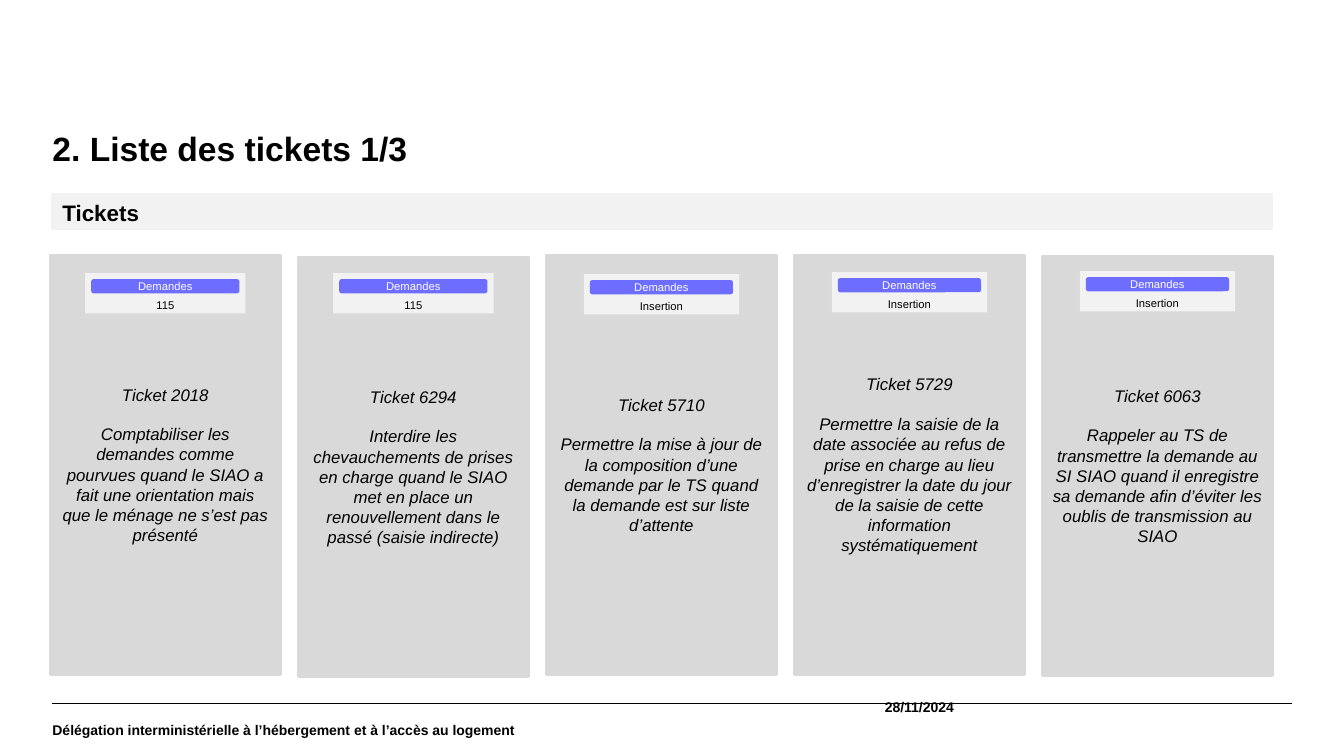
import pptx
import pptx.dml.color
import pptx.enum.shapes
import pptx.enum.text
import pptx.oxml.ns
import pptx.util
from lxml import etree

Inches = pptx.util.Inches
Pt = pptx.util.Pt
RGBColor = pptx.dml.color.RGBColor
SHAPE = pptx.enum.shapes.MSO_SHAPE
ALIGN = pptx.enum.text.PP_ALIGN
ANCHOR = pptx.enum.text.MSO_ANCHOR

BLACK = RGBColor(0x00, 0x00, 0x00)
WHITE = RGBColor(0xFF, 0xFF, 0xFF)
PALE_GREY = RGBColor(0xF2, 0xF2, 0xF2)
CARD_GREY = RGBColor(0xD9, 0xD9, 0xD9)
VIOLET = RGBColor(0x6D, 0x6D, 0xFF)

CARD_WIDTH, CARD_HEIGHT, CARD_STEP = 2.28, 4.16, 2.46
PILL_INSET = 0.06

# Card top, tag top, tag width, tag label, ticket, description
TICKETS = [
    (2.53, 2.71, 1.59, "115", "Ticket 2018",
     "Comptabiliser les demandes comme pourvues quand le SIAO a fait une "
     "orientation mais que le ménage ne s’est pas présenté"),
    (2.55, 2.71, 1.59, "115", "Ticket 6294",
     "Interdire les chevauchements de prises en charge quand le SIAO met en "
     "place un renouvellement dans le passé (saisie indirecte)"),
    (2.53, 2.72, 1.54, "Insertion", "Ticket 5710",
     "Permettre la mise à jour de la composition d’une demande par le TS "
     "quand la demande est sur liste d’attente"),
    (2.53, 2.70, 1.54, "Insertion", "Ticket 5729",
     "Permettre la saisie de la date associée au refus de prise en charge au "
     "lieu d’enregistrer la date du jour de la saisie de cette information "
     "systématiquement"),
    (2.54, 2.69, 1.54, "Insertion", "Ticket 6063",
     "Rappeler au TS de transmettre la demande au SI SIAO quand il enregistre "
     "sa demande afin d’éviter les oublis de transmission au SIAO"),
]


def add_box(shapes, kind, left, top, width, height, fill, outlined=False):
    sp = shapes.add_shape(kind, Inches(left), Inches(top), Inches(width), Inches(height))
    sp.shadow.inherit = False
    sp.fill.solid()
    sp.fill.fore_color.rgb = fill
    if outlined:
        sp.line.color.rgb = fill
        sp.line.width = Pt(2)
    else:
        sp.line.fill.background()
    return sp


def add_text_box(shapes, left, top, width, height, inset=True):
    sp = shapes.add_textbox(Inches(left), Inches(top), Inches(width), Inches(height))
    if not inset:
        tf = sp.text_frame
        tf.margin_left = tf.margin_right = tf.margin_top = tf.margin_bottom = 0
    return sp


def write(sp, lines, size, color=BLACK, bold=False, italic=False,
          align=ALIGN.LEFT, anchor=ANCHOR.TOP, gap=0):
    """Fill a shape with one paragraph per line, gap points apart."""
    tf = sp.text_frame
    tf.word_wrap = True
    tf.vertical_anchor = anchor
    for i, line in enumerate(lines):
        p = tf.add_paragraph() if i else tf.paragraphs[0]
        p.alignment = align
        if i:
            p.space_before = Pt(gap)
        r = p.add_run()
        r.text = line
        r.font.name = "Arial"
        r.font.size = Pt(size)
        r.font.bold = bold
        r.font.italic = italic
        r.font.color.rgb = color


def add_header(s, left, top, width):
    title = add_text_box(s.shapes, left, top, width, 0.5, inset=False)
    write(title, ["2. Liste des tickets 1/3"], 24, bold=True)
    title.text_frame.paragraphs[0].line_spacing = 0.9
    bar = add_box(s.shapes, SHAPE.RECTANGLE, left, top + 0.62, width, 0.34,
                  PALE_GREY, outlined=True)
    write(bar, ["Tickets"], 16, bold=True)


def add_tag(s, left, top, width, label):
    shapes = s.shapes.add_group_shape().shapes
    add_box(shapes, SHAPE.RECTANGLE, left, top, width, 0.4, PALE_GREY)
    pill = add_box(shapes, SHAPE.ROUNDED_RECTANGLE, left + PILL_INSET, top + PILL_INSET,
                   width - 2 * PILL_INSET, 0.14, VIOLET)
    write(pill, ["Demandes"], 8, WHITE, align=ALIGN.CENTER, anchor=ANCHOR.MIDDLE)
    caption = add_text_box(shapes, left, top + 0.2, width, 0.2)
    write(caption, [label], 8, align=ALIGN.CENTER)


def add_card(s, left, top, tag_top, tag_width, label, ticket, description):
    card = add_box(s.shapes, SHAPE.RECTANGLE, left, top, CARD_WIDTH, CARD_HEIGHT,
                   CARD_GREY, outlined=True)
    write(card, [ticket, description], 12, italic=True, align=ALIGN.CENTER,
          anchor=ANCHOR.MIDDLE, gap=14)
    add_tag(s, left + (CARD_WIDTH - tag_width) / 2, tag_top, tag_width, label)


def add_footer(s, left, top, width):
    rule = s.shapes.add_connector(pptx.enum.shapes.MSO_CONNECTOR.STRAIGHT, Inches(left),
                                  Inches(top), Inches(left + width), Inches(top))
    rule.line.color.rgb = BLACK
    rule.line.width = Pt(0.8)
    etree.SubElement(rule._element.spPr, pptx.oxml.ns.qn("a:effectLst"))
    date = add_text_box(s.shapes, left + 7.23, top - 0.23, 1.71, 0.52, inset=False)
    write(date, ["28/11/2024"], 10, bold=True, align=ALIGN.RIGHT, anchor=ANCHOR.MIDDLE)
    owner = add_text_box(s.shapes, left, top, 8.61, 0.52, inset=False)
    write(owner, ["Délégation interministérielle à l’hébergement et à l’accès au logement"],
          10, bold=True, anchor=ANCHOR.MIDDLE)


def main():
    prs = pptx.Presentation()
    prs.slide_width, prs.slide_height = Inches(13.33), Inches(7.5)
    s = prs.slides.add_slide(prs.slide_layouts[6])
    add_header(s, 0.52, 1.31, 12.09)
    for i, ticket in enumerate(TICKETS):
        add_card(s, 0.5 + i * CARD_STEP, *ticket)
    add_footer(s, 0.52, 6.98, 12.29)
    prs.save("out.pptx")


if __name__ == "__main__":
    main()
